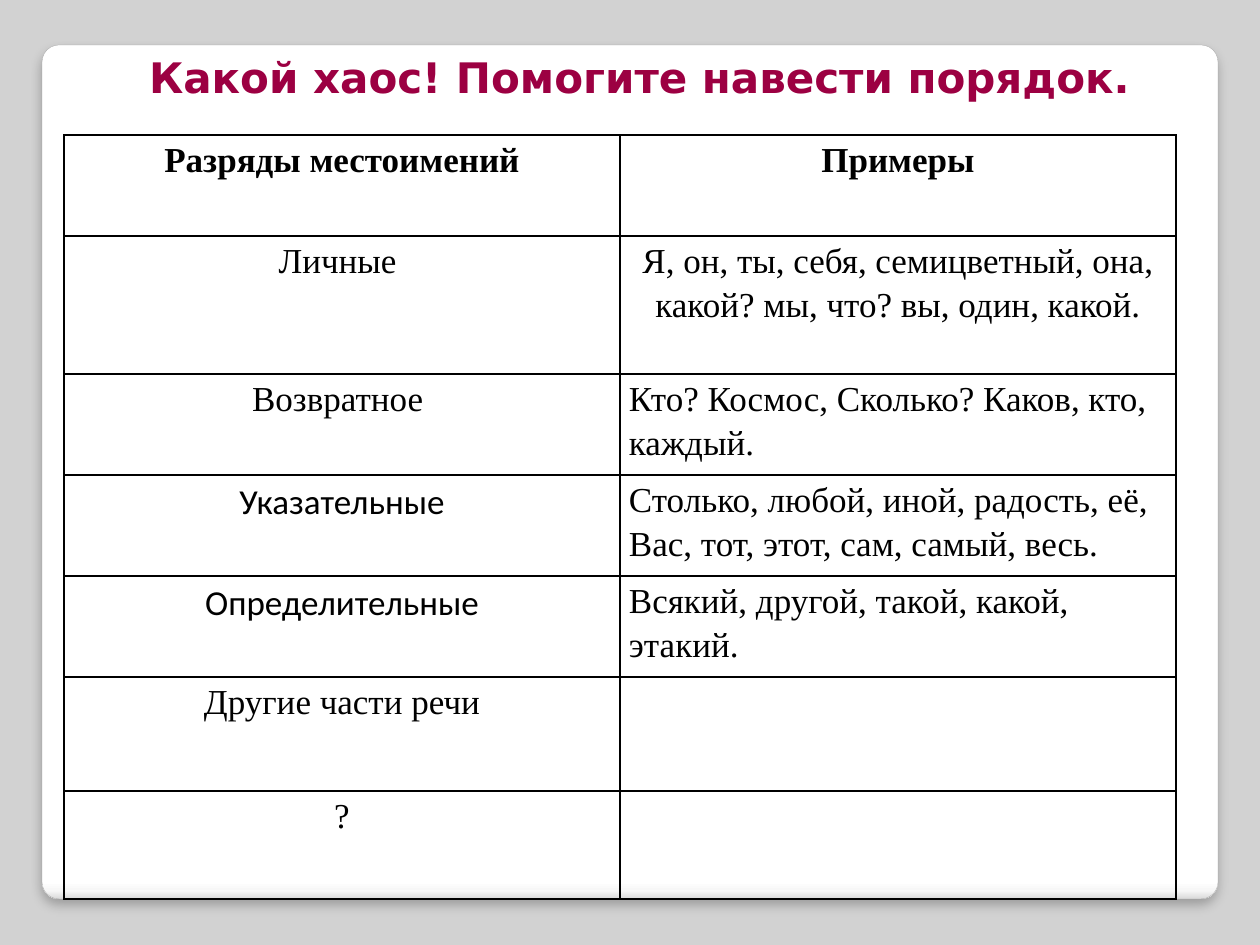
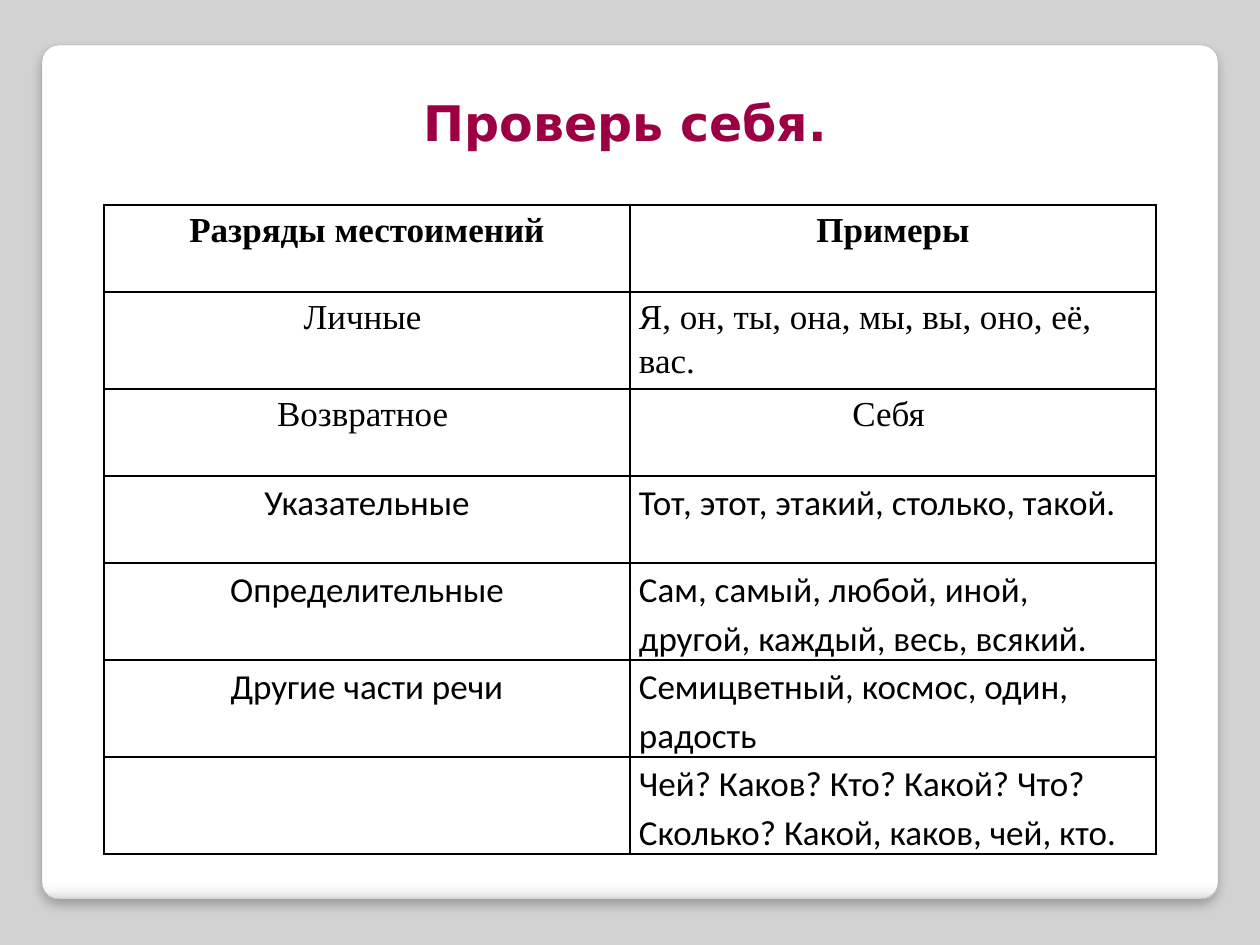
"""Build two slides that sort Russian pronouns into classes, as a task and its answer."""
from dataclasses import dataclass

from lxml.etree import SubElement
from pptx import Presentation
from pptx.dml.color import RGBColor as RGB
from pptx.enum.shapes import MSO_SHAPE as SHAPE
from pptx.enum.text import PP_ALIGN as ALIGN
from pptx.oxml.ns import qn
from pptx.slide import Slide
from pptx.table import _Cell as TableCell
from pptx.text.text import TextFrame
from pptx.util import Emu, Pt

PX_PER_INCH = 126


@dataclass(frozen=True)
class Theme:
    """Colours, fonts and type sizes of both slides."""
    page: str = "D2D2D2"
    edge: str = "A4A4A4"
    title: str = "9C0042"
    ink: str = "000000"
    panel_stops: tuple = ((0, "FFFFFF"), (98, "FFFFFF"), (99, "F7F7F7"), (100, "DADADA"))
    title_font: str = "DejaVu Sans"
    serif: str = "Times New Roman"
    sans: str = "Calibri"
    body: int = 20
    line_spacing: float = 1.15
    after: int = 10


T = Theme()


@dataclass(frozen=True)
class Box:
    """A rectangle in px."""
    x: int
    y: int
    w: int
    h: int


@dataclass(frozen=True)
class Entry:
    """The wording and format of one table cell."""
    text: str = ""
    font: str = T.serif
    bold: bool = False
    align: ALIGN = ALIGN.CENTER
    after: int = T.after


@dataclass(frozen=True)
class Page:
    """The title and table of one slide."""
    title: str
    title_size: int
    title_box: Box
    table_x: int
    table_y: int
    col_width: int
    row_heights: tuple[int, ...]
    rows: tuple[tuple[Entry, Entry], ...]


def px(n: int) -> Emu:
    """Turn px into EMU."""
    return Emu(round(n * 914400 / PX_PER_INCH))


def place(box: Box) -> tuple[Emu, ...]:
    """Give a box as the four EMU lengths of python-pptx."""
    return px(box.x), px(box.y), px(box.w), px(box.h)


def left(text: str, font: str = T.serif, after: int = T.after) -> Entry:
    """Make a left-aligned entry."""
    return Entry(text, font, align=ALIGN.LEFT, after=after)


def write(tf: TextFrame, text: str, *, font: str, size: int, color: str, bold: bool = False,
          align: ALIGN = ALIGN.CENTER, spacing: float = 1.0, after: int = 0) -> None:
    """Write one formatted paragraph into a text frame."""
    tf.word_wrap = True
    p = tf.paragraphs[0]
    p.alignment, p.line_spacing, p.space_after = align, spacing, Pt(after)
    r = p.add_run()
    r.text = text
    r.font.name, r.font.size, r.font.bold = font, Pt(size), bold
    r.font.color.rgb = RGB.from_string(color)


def add_panel(s: Slide) -> None:
    """Draw the rounded white panel with its shaded foot and soft shadow."""
    sp = s.shapes.add_shape(SHAPE.ROUNDED_RECTANGLE, *place(Box(42, 45, 1176, 854)))
    sp.adjustments[0] = 0.02
    sp.fill.gradient()
    sp.fill.gradient_angle = 270
    stops = sp.element.spPr.find(".//" + qn("a:gsLst"))
    for stop in list(stops):
        stops.remove(stop)
    for pos, color in T.panel_stops:
        stop = SubElement(stops, qn("a:gs"), pos=str(pos * 1000))
        SubElement(stop, qn("a:srgbClr"), val=color)
    sp.line.color.rgb = RGB.from_string(T.edge)
    sp.line.width = Pt(0.16)
    sp.shadow.inherit = False
    effects = sp.element.spPr.find(qn("a:effectLst"))
    shadow = SubElement(effects, qn("a:outerShdw"), blurRad=str(Pt(6)), dist=str(Pt(4)),
                        dir="5400000", algn="tl", rotWithShape="0")
    color = SubElement(shadow, qn("a:srgbClr"), val=T.ink)
    SubElement(color, qn("a:alpha"), val="25000")


def add_borders(cell: TableCell) -> None:
    """Draw a thin line on all four sides of a cell."""
    tc_pr = cell._tc.get_or_add_tcPr()
    for i, side in enumerate(("lnL", "lnR", "lnT", "lnB")):
        ln = tc_pr.makeelement(qn(f"a:{side}"), {"w": str(Pt(1))})
        SubElement(SubElement(ln, qn("a:solidFill")), qn("a:srgbClr"), val=T.ink)
        tc_pr.insert(i, ln)


def add_table(s: Slide, page: Page) -> None:
    """Draw the two-column table of pronoun classes and examples."""
    box = Box(page.table_x, page.table_y, 2 * page.col_width, sum(page.row_heights))
    table = s.shapes.add_table(len(page.rows), 2, *place(box)).table
    table.first_row = table.horz_banding = False
    for col in table.columns:
        col.width = px(page.col_width)
    for i, (height, entries) in enumerate(zip(page.row_heights, page.rows)):
        table.rows[i].height = px(height)
        for j, entry in enumerate(entries):
            cell = table.cell(i, j)
            cell.margin_left = cell.margin_right = px(9)
            cell.margin_top = cell.margin_bottom = 0
            cell.fill.background()
            add_borders(cell)
            if entry.text:
                write(cell.text_frame, entry.text, font=entry.font, size=T.body, color=T.ink,
                      bold=entry.bold, align=entry.align, spacing=T.line_spacing,
                      after=entry.after)


def add_page(prs: Presentation, page: Page) -> None:
    """Add one slide with its panel, title and table."""
    s = prs.slides.add_slide(prs.slide_layouts[6])
    s.background.fill.solid()
    s.background.fill.fore_color.rgb = RGB.from_string(T.page)
    add_panel(s)
    tf = s.shapes.add_textbox(*place(page.title_box)).text_frame
    write(tf, page.title, font=T.title_font, size=page.title_size, color=T.title, bold=True)
    add_table(s, page)


HEADER = (Entry("Разряды местоимений", bold=True), Entry("Примеры", bold=True))
PERSONAL = Entry("Личные ")
REFLEXIVE = Entry("Возвратное ")
DEMONSTRATIVE = Entry("Указательные", T.sans)
DEFINITIVE = Entry("Определительные", T.sans)
OTHER = "Другие части речи"

PAGES = (
    Page("Какой хаос! Помогите навести порядок.", 24, Box(94, 45, 1091, 63),
         64, 135, 556, (101, 138, 101, 101, 101, 114, 108), (
             HEADER,
             (PERSONAL, Entry("Я, он, ты, себя, семицветный, она, какой? мы, что? вы, один, "
                              "какой.", after=0)),
             (REFLEXIVE, left("Кто? Космос, Сколько? Каков, кто, каждый.")),
             (DEMONSTRATIVE, left("Столько, любой, иной, радость, её, Вас, тот, этот, сам, "
                                  "самый, весь.")),
             (DEFINITIVE, left("Всякий, другой, такой, какой, этакий.")),
             (Entry(OTHER), Entry()),
             (Entry("?"), Entry()),
         )),
    Page("Проверь себя.", 28, Box(104, 86, 1042, 72),
         104, 205, 526, (87, 97, 87, 87, 97, 97, 97), (
             HEADER,
             (PERSONAL, left("Я, он, ты, она, мы, вы, оно, её, вас.", after=0)),
             (REFLEXIVE, Entry("Себя ")),
             (DEMONSTRATIVE, left("Тот, этот, этакий, столько, такой.", T.sans)),
             (DEFINITIVE, left("Сам, самый, любой, иной, другой, каждый, весь, всякий.", T.sans)),
             (Entry(OTHER, T.sans), left("Семицветный, космос, один, радость", T.sans)),
             (Entry(), left("Чей? Каков? Кто? Какой? Что? Сколько? Какой, каков, чей, кто.",
                            T.sans)),
         )),
)


def main() -> None:
    """Build and save the presentation."""
    prs = Presentation()
    prs.slide_width, prs.slide_height = px(1260), px(945)
    for page in PAGES:
        add_page(prs, page)
    prs.save("out.pptx")


if __name__ == "__main__":
    main()
